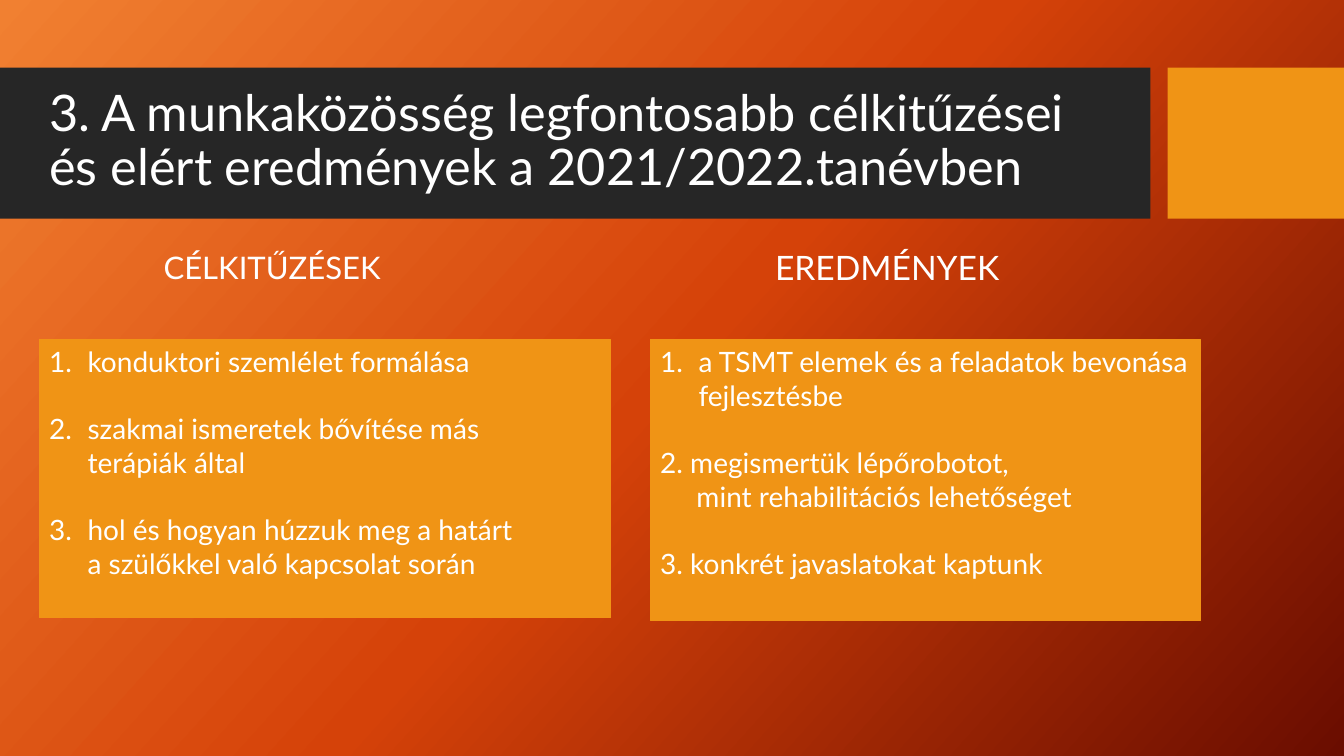
from lxml import etree
from pptx import Presentation
from pptx import util as u
from pptx.dml.color import RGBColor
from pptx.enum import shapes, text
from pptx.oxml import ns

FONT = "Lato"
WHITE, DARK, ORANGE = "FFFFFF", "262626", "F09415"
GRADIENT = [(0, "F18031"), (50, "D54209"), (100, "6A0D00")]
GRADIENT_ANGLE = 42
BANDS = [((0, 0.67, 11.41, 1.5), DARK), ((11.58, 0.67, 1.75, 1.5), ORANGE)]
TITLE = "3. A munkaközösség legfontosabb célkitűzései és elért eredmények a 2021/2022.tanévben"
TITLE_BOX = (0.39, 0.9, 10.8, 1.02)
HEADINGS = [
    ("CÉLKITŰZÉSEK", (0.95, 2.25, 3.5, 0.63), 22.2, 0.05),
    ("EREDMÉNYEK", (7.05, 2.16, 3.5, 0.81), 24, 0.12),
]
NUMBERED, TYPED = 0.38, 0.36
PANELS = [
    ((0.39, 3.37, 5.67, 2.76), [
        (1, "konduktori szemlélet formálása"),
        (2, "szakmai ismeretek bővítése más\vterápiák által"),
        (3, "hol és hogyan húzzuk meg a határt\va szülőkkel való kapcsolat során"),
    ]),
    ((6.45, 3.37, 5.46, 2.79), [
        (1, "a TSMT elemek és a feladatok bevonása fejlesztésbe"),
        (None, "2. megismertük lépőrobotot,\vmint rehabilitációs lehetőséget"),
        (None, "3. konkrét javaslatokat kaptunk"),
    ]),
]


def color(hex_value):
    return RGBColor.from_string(hex_value)


def add_background(slide):
    common = slide.element.find(ns.qn("p:cSld"))
    background = etree.Element(ns.qn("p:bg"))
    common.insert(0, background)
    properties = etree.SubElement(background, ns.qn("p:bgPr"))
    fill = etree.SubElement(properties, ns.qn("a:gradFill"), rotWithShape="1")
    stops = etree.SubElement(fill, ns.qn("a:gsLst"))
    for position, hex_value in GRADIENT:
        stop = etree.SubElement(stops, ns.qn("a:gs"), pos=str(position * 1000))
        etree.SubElement(stop, ns.qn("a:srgbClr"), val=hex_value)
    etree.SubElement(fill, ns.qn("a:lin"), ang=str(GRADIENT_ANGLE * 60000), scaled="0")
    etree.SubElement(properties, ns.qn("a:effectLst"))


def add_rectangle(slide, box, hex_value):
    shape = slide.shapes.add_shape(shapes.MSO_SHAPE.RECTANGLE, *map(u.Inches, box))
    shape.shadow.inherit = False
    shape.fill.solid()
    shape.fill.fore_color.rgb = color(hex_value)
    shape.line.fill.background()
    return shape


def style(paragraph, size, alignment=text.PP_ALIGN.LEFT):
    paragraph.alignment = alignment
    for run in paragraph.runs:
        run.font.name = FONT
        run.font.size = u.Pt(size)
        run.font.color.rgb = color(WHITE)


def add_label(slide, content, box, size, anchor, alignment):
    frame = slide.shapes.add_textbox(*map(u.Inches, box)).text_frame
    frame.word_wrap = True
    frame.vertical_anchor = anchor
    frame.text = content
    style(frame.paragraphs[0], size, alignment)
    return frame


def add_panel(slide, box, items):
    shape = add_rectangle(slide, box, ORANGE)
    shape.line.color.rgb = color(ORANGE)
    shape.line.width = u.Pt(0.75)
    frame = shape.text_frame
    frame.word_wrap = True
    frame.vertical_anchor = text.MSO_ANCHOR.TOP
    for index, (number, content) in enumerate(items):
        paragraph = frame.add_paragraph() if index else frame.paragraphs[0]
        paragraph.text = content
        indent = u.Inches(NUMBERED if number else TYPED)
        properties = paragraph._p.get_or_add_pPr()
        properties.set("marL", str(indent))
        properties.set("indent", str(-indent))
        if index:
            paragraph.space_before = u.Pt(24)
        if number:
            etree.SubElement(properties, ns.qn("a:buFont"), typeface=FONT)
            etree.SubElement(properties, ns.qn("a:buAutoNum"),
                             type="arabicPeriod", startAt=str(number))
        style(paragraph, 20)


def main():
    """Build the slide on goals and results and save it."""
    presentation = Presentation()
    presentation.slide_width = u.Inches(13.33)
    presentation.slide_height = u.Inches(7.5)
    slide = presentation.slides.add_slide(presentation.slide_layouts[6])
    add_background(slide)
    for box, hex_value in BANDS:
        add_rectangle(slide, box, hex_value)
    title = add_label(slide, TITLE, TITLE_BOX, 36,
                      text.MSO_ANCHOR.MIDDLE, text.PP_ALIGN.LEFT)
    title.paragraphs[0].line_spacing = 0.9
    for content, box, size, bottom in HEADINGS:
        heading = add_label(slide, content, box, size,
                            text.MSO_ANCHOR.BOTTOM, text.PP_ALIGN.CENTER)
        heading.margin_bottom = u.Inches(bottom)
    for box, items in PANELS:
        add_panel(slide, box, items)
    presentation.save("out.pptx")


if __name__ == "__main__":
    main()
